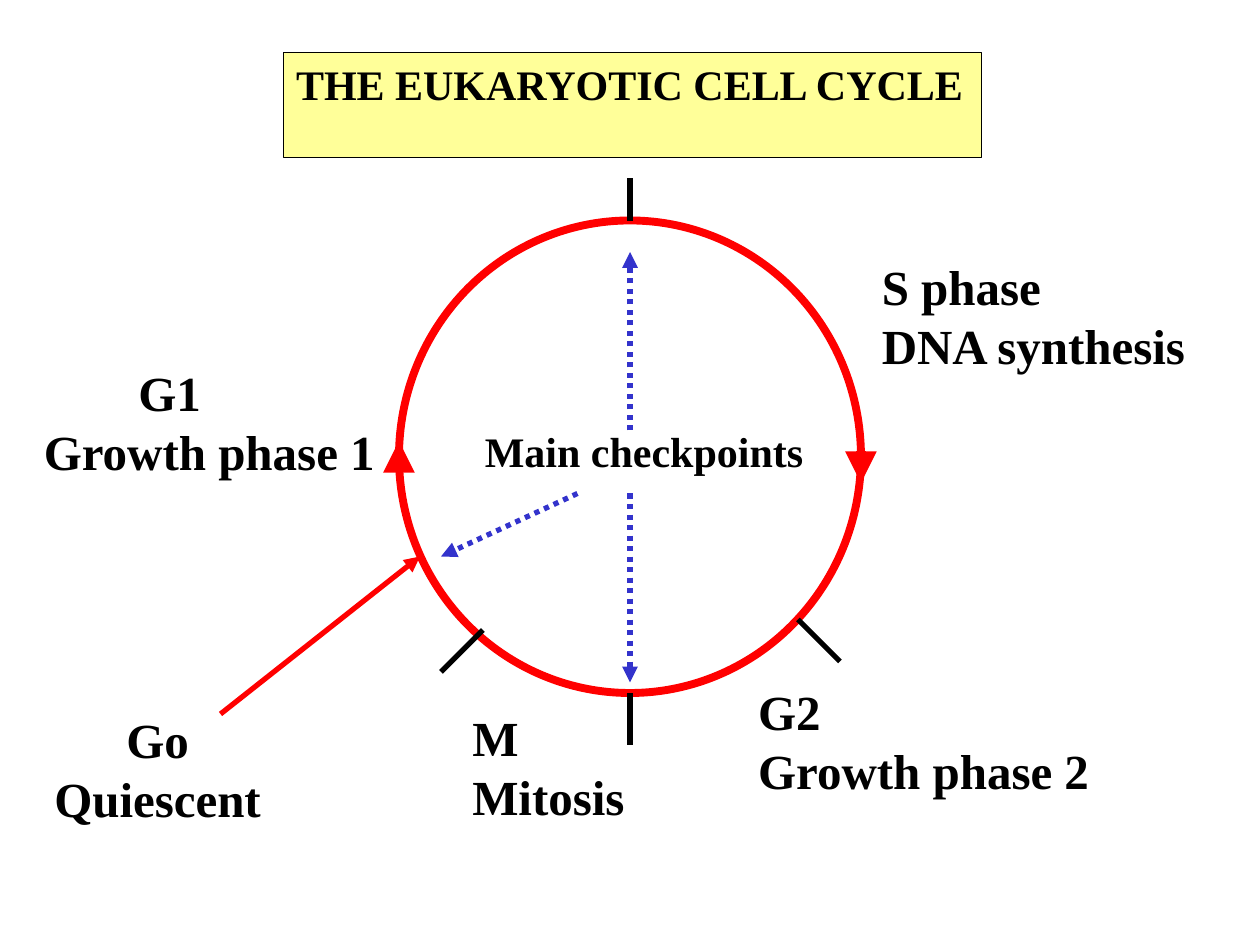
from dataclasses import dataclass

from lxml.etree import SubElement
from pptx import Presentation
from pptx.dml.color import RGBColor
from pptx.enum.dml import MSO_LINE
from pptx.enum.shapes import MSO_CONNECTOR, MSO_SHAPE
from pptx.enum.text import MSO_ANCHOR, MSO_AUTO_SIZE, PP_ALIGN
from pptx.oxml.ns import qn
from pptx.util import Pt


@dataclass(frozen=True)
class Theme:
    font: str = "Times New Roman"
    black: RGBColor = RGBColor(0x00, 0x00, 0x00)
    red: RGBColor = RGBColor(0xFF, 0x00, 0x00)
    blue: RGBColor = RGBColor(0x33, 0x33, 0xCC)
    yellow: RGBColor = RGBColor(0xFF, 0xFF, 0x99)
    title_size: int = 24
    note_size: int = 24
    phase_size: int = 28


THEME = Theme()

CIRCLE = (228, 126, 264, 270)
PHASE_HEIGHT = 74.2

# lines, left, top, width, format
PHASES = [
    (["S phase", "DNA synthesis"], 496.8, 143.3, 189.4, {}),
    (["G2", "Growth phase 2"], 426.2, 385.9, 204.5, {}),
    (["M", "Mitosis"], 262.8, 401, 101.5, {}),
    (["G1", "Growth phase 1"], 18, 203.8, 204.5, {"first_indent": 54}),
    (["Go", "Quiescent"], 23.8, 401.8, 132.5, {"align": PP_ALIGN.CENTER}),
]

# start x, start y, end x, end y
BOUNDARY_TICKS = [
    (360, 126, 360, 102),
    (456, 354, 480, 378),
    (360, 396, 360, 426),
    (276, 360, 252, 384),
]
CHECKPOINT_ARROWS = [
    (360, 282, 360, 390),
    (330, 282, 252, 318),
    (360, 246, 360, 144),
]
DIRECTION_ARROWS = [(492, 258, 492, 276), (228, 264, 228, 252)]
QUIESCENT_ARROW = (126, 408, 240, 318)


def write_text(shape, lines, size, align=PP_ALIGN.LEFT, first_indent=0):
    """Fill a shape with bold lines; first_indent shifts the first line right."""
    frame = shape.text_frame
    frame.word_wrap = False
    frame.auto_size = MSO_AUTO_SIZE.SHAPE_TO_FIT_TEXT
    frame.vertical_anchor = MSO_ANCHOR.TOP
    frame.text = "\n".join(lines)
    for paragraph in frame.paragraphs:
        paragraph.alignment = align
        font = paragraph.runs[0].font
        font.name, font.size, font.bold = THEME.font, Pt(size), True
        font.color.rgb = THEME.black
    if first_indent:
        properties = frame.paragraphs[0]._p.get_or_add_pPr()
        properties.set("marL", str(Pt(first_indent)))


def add_label(slide, lines, box, size, **text_format):
    label = slide.shapes.add_textbox(*map(Pt, box))
    write_text(label, lines, size, **text_format)


def add_title(slide, text):
    title = slide.shapes.title
    title.left, title.top, title.width, title.height = map(Pt, (162, 30, 398.9, 36.7))
    title.fill.solid()
    title.fill.fore_color.rgb = THEME.yellow
    title.line.color.rgb = THEME.black
    title.line.width = Pt(0.75)
    write_text(title, [text], THEME.title_size)


def add_circle(slide):
    circle = slide.shapes.add_shape(MSO_SHAPE.OVAL, *map(Pt, CIRCLE))
    circle.shadow.inherit = False
    circle.fill.background()
    circle.line.color.rgb = THEME.red
    circle.line.width = Pt(4.5)


def add_line(slide, ends, color, width=3, dash=None, arrow=True):
    connector = slide.shapes.add_connector(MSO_CONNECTOR.STRAIGHT, *map(Pt, ends))
    line = connector.line
    line.color.rgb = color
    line.width = Pt(width)
    if dash is not None:
        line.dash_style = dash
    if arrow:
        SubElement(line._get_or_add_ln(), qn("a:tailEnd"), type="triangle")
    SubElement(connector._element.spPr, qn("a:effectLst"))


def main():
    presentation = Presentation()
    presentation.slide_width, presentation.slide_height = Pt(720), Pt(540)
    slide = presentation.slides.add_slide(presentation.slide_layouts[5])

    add_title(slide, "THE EUKARYOTIC CELL CYCLE")
    add_circle(slide)
    for ends in BOUNDARY_TICKS:
        add_line(slide, ends, THEME.black, arrow=False)
    for lines, left, top, width, text_format in PHASES:
        box = (left, top, width, PHASE_HEIGHT)
        add_label(slide, lines, box, THEME.phase_size, **text_format)
    add_line(slide, QUIESCENT_ARROW, THEME.red)
    add_label(slide, ["Main checkpoints"], (270, 239.8, 196.6, 36), THEME.note_size)
    for ends in CHECKPOINT_ARROWS:
        add_line(slide, ends, THEME.blue, dash=MSO_LINE.ROUND_DOT)
    for ends in DIRECTION_ARROWS:
        add_line(slide, ends, THEME.red, width=6)

    presentation.save("out.pptx")


if __name__ == "__main__":
    main()
